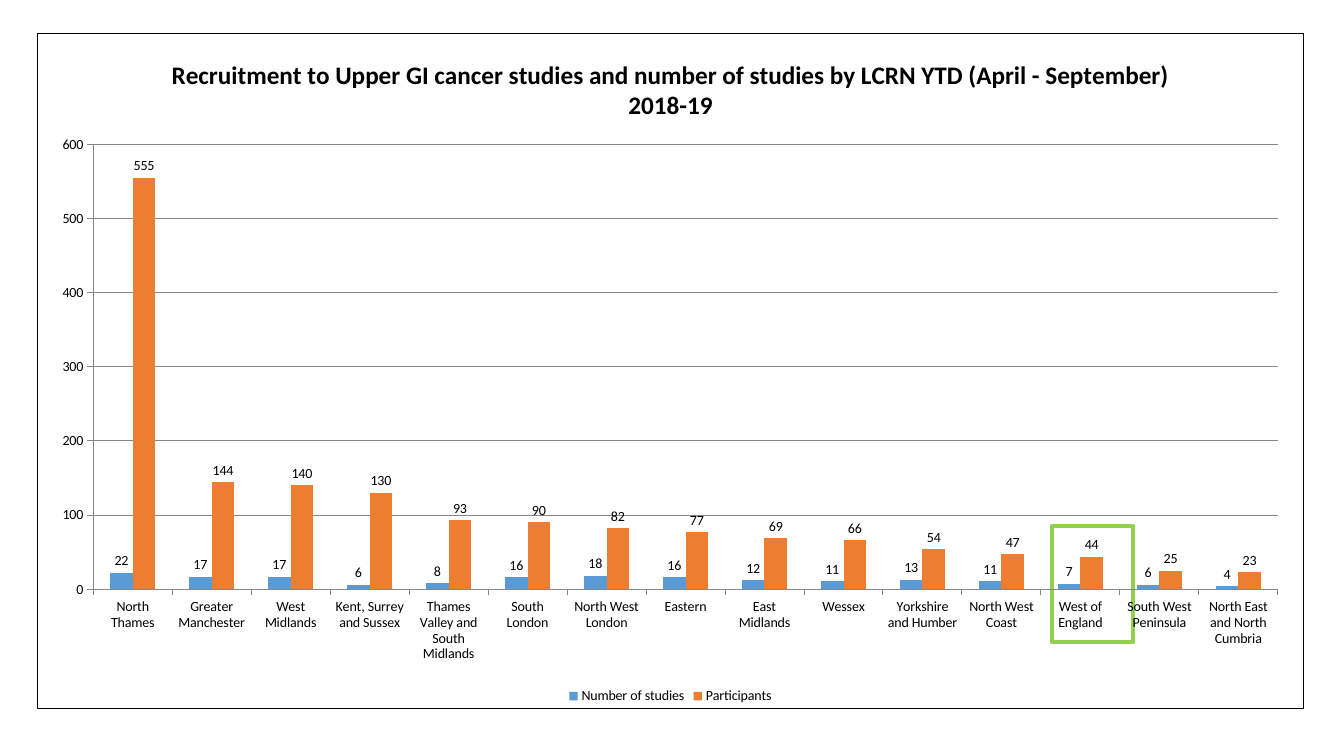
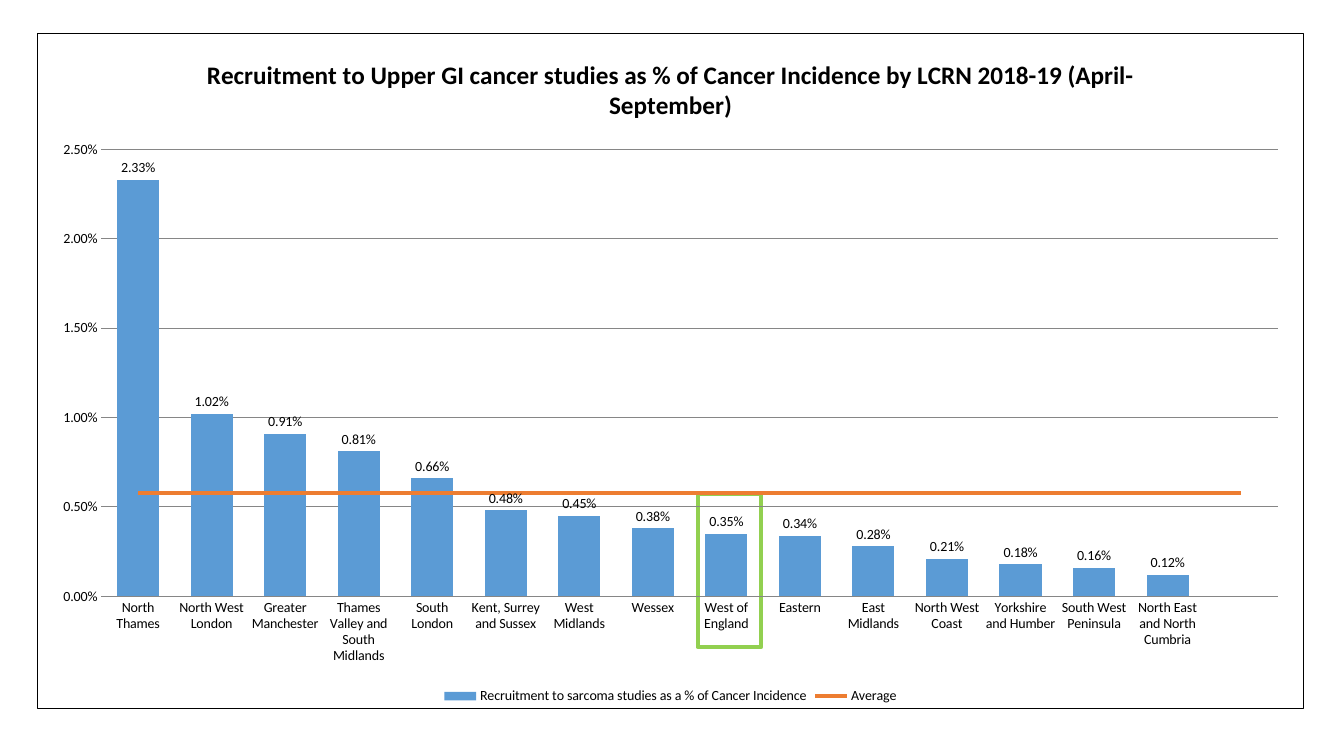
"""Build two slides that chart recruitment to Upper GI cancer studies by network."""
from copy import deepcopy
from dataclasses import dataclass
from typing import Optional

from lxml.etree import SubElement
from pptx import Presentation
from pptx.chart.chart import Chart
from pptx.chart.data import CategoryChartData
from pptx.dml.color import RGBColor
from pptx.enum.chart import (
    XL_CHART_TYPE, XL_LABEL_POSITION, XL_LEGEND_POSITION, XL_MARKER_STYLE, XL_TICK_MARK,
)
from pptx.enum.shapes import MSO_SHAPE
from pptx.oxml import parse_xml
from pptx.oxml.ns import nsdecls, qn
from pptx.slide import Slide
from pptx.text.text import Font, TextFrame
from pptx.util import Emu, Pt

BLACK = RGBColor(0x00, 0x00, 0x00)
GRAY = RGBColor(0x86, 0x86, 0x86)
BLUE = RGBColor(0x5B, 0x9B, 0xD5)
ORANGE = RGBColor(0xED, 0x7D, 0x31)
GREEN = RGBColor(0x92, 0xD0, 0x50)
SERIES_COLORS = (BLUE, ORANGE)
FONT_NAME = "Calibri"
EMU_PER_PX = 9144
BLANK_LAYOUT = 6


@dataclass(frozen=True)
class Box:
    """A rectangle in px."""
    left: int
    top: int
    width: int
    height: int

    def emu(self) -> tuple[Emu, Emu, Emu, Emu]:
        """Return the rectangle in EMU."""
        return px(self.left), px(self.top), px(self.width), px(self.height)


@dataclass(frozen=True)
class SeriesData:
    """The name and values of one series."""
    name: str
    values: tuple[Optional[float], ...]
    is_line: bool = False


@dataclass(frozen=True)
class ChartSlide:
    """The content and format of one chart slide."""
    title: str
    categories: tuple[str, ...]
    series: tuple[SeriesData, ...]
    plot_box: Box
    highlight: Box
    maximum: float
    step: float
    number_format: str
    gap: int
    overlap: int
    has_axis_marks: bool


SLIDE_WIDTH, SLIDE_HEIGHT = 1333, 750
CHART_BOX = Box(37, 33, 1256, 670)

CHART_SLIDES = (
    ChartSlide(
        title="Recruitment to Upper GI cancer studies and number of studies by LCRN YTD "
              "(April - September) 2018-19",
        categories=(
            "North Thames", "Greater Manchester", "West Midlands", "Kent, Surrey and Sussex",
            "Thames Valley and South Midlands", "South London", "North West London", "Eastern",
            "East Midlands", "Wessex", "Yorkshire and Humber", "North West Coast",
            "West of England", "South West Peninsula", "North East and North Cumbria",
        ),
        series=(
            SeriesData("Number of studies",
                       (22, 17, 17, 6, 8, 16, 18, 16, 12, 11, 13, 11, 7, 6, 4)),
            SeriesData("Participants",
                       (555, 144, 140, 130, 93, 90, 82, 77, 69, 66, 54, 47, 44, 25, 23)),
        ),
        plot_box=Box(92, 143, 1176, 442),
        highlight=Box(1043, 522, 81, 115),
        maximum=600, step=100, number_format="General",
        gap=150, overlap=0, has_axis_marks=True,
    ),
    ChartSlide(
        title="Recruitment to Upper GI cancer studies as % of Cancer Incidence by LCRN 2018-19 "
              "(April-September)",
        categories=(
            "North Thames", "North West London", "Greater Manchester",
            "Thames Valley and South Midlands", "South London", "Kent, Surrey and Sussex",
            "West Midlands", "Wessex", "West of England", "Eastern", "East Midlands",
            "North West Coast", "Yorkshire and Humber", "South West Peninsula",
            "North East and North Cumbria", "",
        ),
        series=(
            SeriesData("Recruitment to sarcoma studies as a % of Cancer Incidence",
                       (0.0233, 0.0102, 0.0091, 0.0081, 0.0066, 0.0048, 0.0045, 0.0038,
                        0.0035, 0.0034, 0.0028, 0.0021, 0.0018, 0.0016, 0.0012, None)),
            SeriesData("Average", (0.0058,) * 16, is_line=True),
        ),
        plot_box=Box(100, 148, 1168, 444),
        highlight=Box(692, 490, 63, 152),
        maximum=0.025, step=0.005, number_format="0.00%",
        gap=75, overlap=-25, has_axis_marks=False,
    ),
)


def px(length: int) -> Emu:
    """Turn px into EMU."""
    return Emu(length * EMU_PER_PX)


def format_font(font: Font, *, size: int, bold: bool = False, color: RGBColor = BLACK) -> None:
    """Apply the shared typeface with a size, weight and colour."""
    font.name = FONT_NAME
    font.size = Pt(size)
    font.bold = bold
    font.color.rgb = color


def write_text(frame: TextFrame, text: str, *, size: int, bold: bool = False) -> None:
    """Write one formatted paragraph."""
    run = frame.paragraphs[0].add_run()
    run.text = text
    format_font(run.font, size=size, bold=bold)


def add_highlight(slide: Slide, box: Box) -> None:
    """Outline one category in green."""
    shape = slide.shapes.add_shape(MSO_SHAPE.RECTANGLE, *box.emu())
    shape.shadow.inherit = False
    shape.fill.background()
    shape.line.color.rgb = GREEN
    shape.line.width = Pt(3)


def frame_chart(chart: Chart, plot_box: Box) -> None:
    """Give the chart a thin border, no fill and a fixed plot area."""
    border = parse_xml(
        f'<c:spPr {nsdecls("c", "a")}><a:noFill/><a:ln w="9525"><a:solidFill>'
        f'<a:srgbClr val="{BLACK}"/></a:solidFill></a:ln></c:spPr>')
    chart.element.find(qn("c:chart")).addnext(border)
    plot_area = chart.element.find(qn("c:chart")).find(qn("c:plotArea"))
    plot_area.append(parse_xml(f'<c:spPr {nsdecls("c", "a")}><a:noFill/></c:spPr>'))
    for layout in plot_area.findall(qn("c:layout")):
        plot_area.remove(layout)
    layout = parse_xml(f'<c:layout {nsdecls("c")}><c:manualLayout/></c:layout>')
    settings = {
        "layoutTarget": "inner", "xMode": "edge", "yMode": "edge",
        "x": (plot_box.left - CHART_BOX.left) / CHART_BOX.width,
        "y": (plot_box.top - CHART_BOX.top) / CHART_BOX.height,
        "w": plot_box.width / CHART_BOX.width,
        "h": plot_box.height / CHART_BOX.height,
    }
    for name, value in settings.items():
        SubElement(layout[0], qn(f"c:{name}")).set("val", str(value))
    plot_area.insert(0, layout)


def format_axes(chart: Chart, content: ChartSlide) -> None:
    """Set the scale, gridlines and tick marks."""
    mark = XL_TICK_MARK.OUTSIDE if content.has_axis_marks else XL_TICK_MARK.NONE
    for axis in (chart.category_axis, chart.value_axis):
        axis.major_tick_mark = mark
        axis.minor_tick_mark = XL_TICK_MARK.NONE
        axis.format.line.color.rgb = GRAY
        axis.format.line.width = Pt(0.75)
    value_axis = chart.value_axis
    if not content.has_axis_marks:
        value_axis.format.line.fill.background()
    value_axis.minimum_scale = 0
    value_axis.maximum_scale = content.maximum
    value_axis.major_unit = content.step
    value_axis.tick_labels.number_format = content.number_format
    value_axis.tick_labels.number_format_is_linked = False
    value_axis.major_gridlines.format.line.color.rgb = GRAY
    value_axis.major_gridlines.format.line.width = Pt(0.75)


def move_to_line(chart: Chart, index: int) -> None:
    """Move a column series to a line plot on the same axes."""
    bar_chart = chart.element.find(f".//{qn('c:barChart')}")
    series = bar_chart.findall(qn("c:ser"))[index]
    for setting in series.findall(qn("c:invertIfNegative")):
        series.remove(setting)
    line_chart = parse_xml(
        f'<c:lineChart {nsdecls("c")}><c:grouping val="standard"/>'
        '<c:varyColors val="0"/></c:lineChart>')
    line_chart.append(series)
    SubElement(line_chart, qn("c:marker")).set("val", "1")
    line_chart.extend([deepcopy(axis_id) for axis_id in bar_chart.findall(qn("c:axId"))])
    bar_chart.addnext(line_chart)
    line = chart.plots[1].series[0]
    line.smooth = False
    line.marker.style = XL_MARKER_STYLE.NONE
    line.format.line.color.rgb = SERIES_COLORS[index]
    line.format.line.width = Pt(3)


def format_series(chart: Chart, content: ChartSlide) -> None:
    """Colour and label the columns and draw any line series."""
    plot = chart.plots[0]
    plot.vary_by_categories = False
    plot.gap_width = content.gap
    plot.overlap = content.overlap
    columns = list(plot.series)
    for index, (series, data) in enumerate(zip(columns, content.series)):
        if data.is_line:
            move_to_line(chart, index)
            continue
        series.format.fill.solid()
        series.format.fill.fore_color.rgb = SERIES_COLORS[index]
        labels = series.data_labels
        labels.show_value = True
        labels.position = XL_LABEL_POSITION.OUTSIDE_END
        labels.number_format = content.number_format
        labels.number_format_is_linked = False


def add_recruitment_chart(slide: Slide, content: ChartSlide) -> None:
    """Add the titled chart."""
    chart_data = CategoryChartData(number_format=content.number_format)
    chart_data.categories = content.categories
    for series in content.series:
        chart_data.add_series(series.name, series.values)
    chart = slide.shapes.add_chart(
        XL_CHART_TYPE.COLUMN_CLUSTERED, *CHART_BOX.emu(), chart_data).chart
    format_font(chart.font, size=10)
    chart.has_title = True
    write_text(chart.chart_title.text_frame, content.title, size=18, bold=True)
    chart.chart_title.include_in_layout = False
    chart.has_legend = True
    chart.legend.position = XL_LEGEND_POSITION.BOTTOM
    chart.legend.include_in_layout = False
    format_axes(chart, content)
    format_series(chart, content)
    frame_chart(chart, content.plot_box)


def main() -> None:
    """Build and save the presentation."""
    presentation = Presentation()
    presentation.slide_width = px(SLIDE_WIDTH)
    presentation.slide_height = px(SLIDE_HEIGHT)
    for content in CHART_SLIDES:
        slide = presentation.slides.add_slide(presentation.slide_layouts[BLANK_LAYOUT])
        add_highlight(slide, content.highlight)
        add_recruitment_chart(slide, content)
    presentation.save("out.pptx")


if __name__ == "__main__":
    main()
